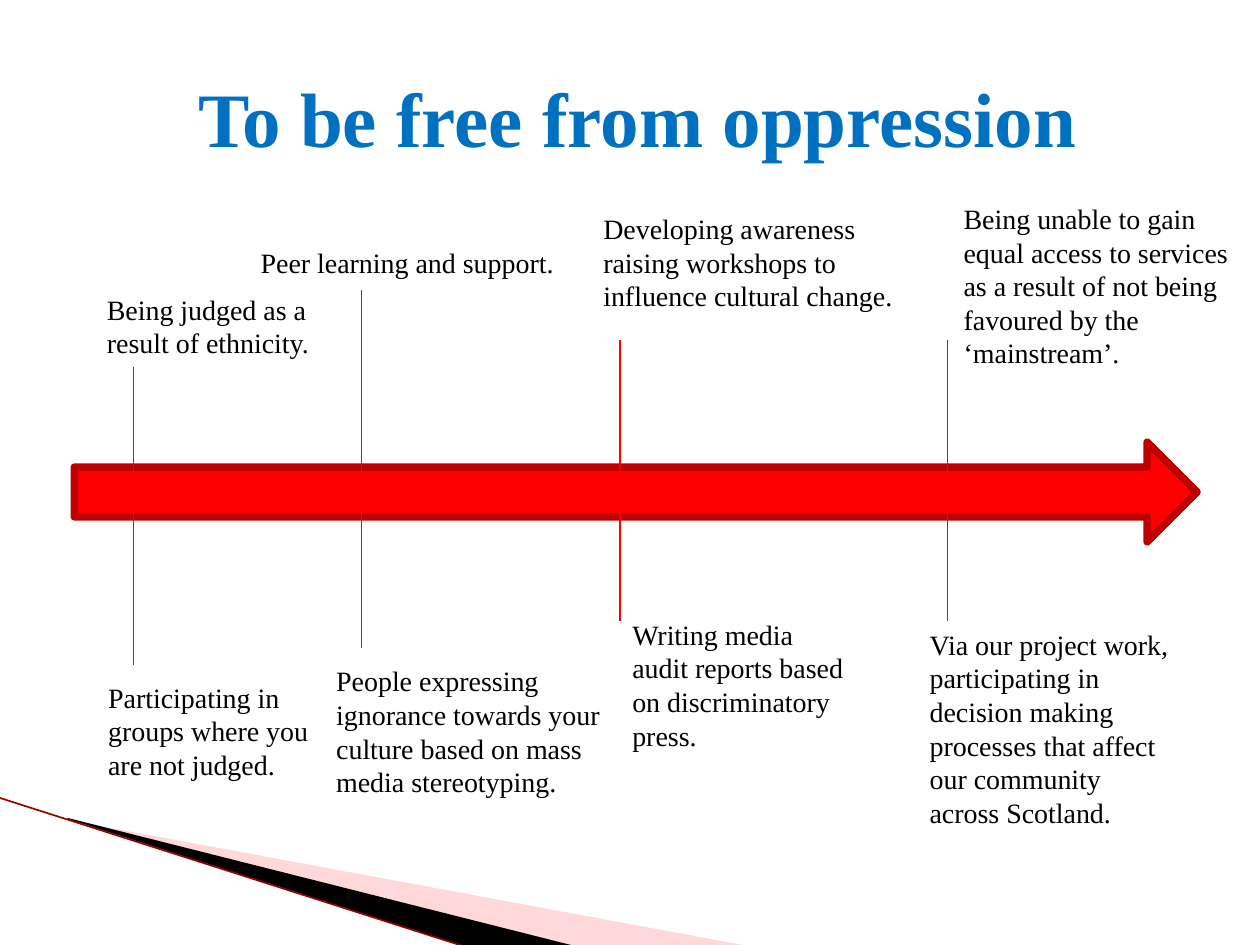
from lxml import etree
from pptx import Presentation
from pptx.dml.color import RGBColor
from pptx.enum.shapes import MSO_CONNECTOR, MSO_SHAPE
from pptx.enum.text import MSO_ANCHOR, PP_ALIGN
from pptx.oxml.ns import qn
from pptx.util import Inches, Pt

STRAIGHT = MSO_CONNECTOR.STRAIGHT
RIGHT_ARROW = MSO_SHAPE.RIGHT_ARROW
TOP, MIDDLE = MSO_ANCHOR.TOP, MSO_ANCHOR.MIDDLE
LEFT, CENTER = PP_ALIGN.LEFT, PP_ALIGN.CENTER

FONT = "Times New Roman"
RED = "FF0000"

# Timeline markers: x, top, bottom
MARKERS = [
    (1.06, 2.91, 5.28),
    (2.87, 2.30, 5.14),
    (4.92, 2.70, 4.93),
    (7.52, 2.70, 4.93),
]

# Labels: left, top, width, height, paragraphs
LABELS = [
    (0.75, 2.27, 2.13, 0.64, ["Being judged as a", "result of ethnicity."]),
    (0.76, 5.35, 1.81, 0.91, ["Participating in groups where you are not judged."]),
    (1.97, 1.90, 2.76, 0.37, ["Peer learning and support."]),
    (2.57, 5.22, 2.36, 1.18, ["People expressing ignorance towards your culture "
                              "based on mass media stereotyping."]),
    (4.69, 1.63, 2.60, 0.91, ["Developing awareness raising workshops to "
                              "influence cultural change."]),
    (4.92, 4.85, 1.97, 1.18, ["Writing media audit reports based on "
                              "discriminatory press."]),
    (7.55, 1.55, 2.30, 1.45, ["Being unable to gain equal access to services as a "
                              "result of not being favoured by the ‘mainstream’."]),
    (7.28, 4.93, 2.13, 1.72, ["Via our project work, participating in decision making "
                              "processes that affect our community across Scotland."]),
]


def rgb(color):
    return RGBColor.from_string(color)


def add_wedge(slide, points, color, opacity=100):
    start, *rest = [(Inches(x), Inches(y)) for x, y in points]
    builder = slide.shapes.build_freeform(*start)
    builder.add_line_segments(rest, close=True)
    sp = builder.convert_to_shape()
    sp.shadow.inherit = False
    sp.line.fill.background()
    sp.fill.solid()
    sp.fill.fore_color.rgb = rgb(color)
    if opacity < 100:
        clr = sp._element.spPr.find(qn("a:solidFill")).find(qn("a:srgbClr"))
        etree.SubElement(clr, qn("a:alpha")).set("val", str(opacity * 1000))


def add_line(slide, x1, y1, x2, y2, color, width):
    line = slide.shapes.add_connector(
        STRAIGHT, Inches(x1), Inches(y1), Inches(x2), Inches(y2))
    line.line.color.rgb = rgb(color)
    line.line.width = Pt(width)
    etree.SubElement(line._element.spPr, qn("a:effectLst"))


def add_arrow(slide, left, top, width, height):
    sp = slide.shapes.add_shape(
        RIGHT_ARROW, Inches(left), Inches(top), Inches(width), Inches(height))
    sp.shadow.inherit = False
    sp.fill.solid()
    sp.fill.fore_color.rgb = rgb(RED)
    sp.line.color.rgb = rgb("BD0000")
    sp.line.width = Pt(4.33)
    etree.SubElement(sp._element.spPr.find(qn("a:ln")), qn("a:round"))


def add_text(slide, left, top, width, height, paragraphs, size=16,
             color="000000", bold=False, align=LEFT, anchor=TOP, indent=0):
    box = slide.shapes.add_textbox(
        Inches(left), Inches(top), Inches(width), Inches(height))
    tf = box.text_frame
    tf.word_wrap = True
    tf.vertical_anchor = anchor
    tf.margin_left = Inches(0.1 + indent)
    tf.text = "\n".join(paragraphs)
    for p in tf.paragraphs:
        p.alignment = align
        p.font.name = FONT
        p.font.size = Pt(size)
        p.font.bold = bold
        p.font.color.rgb = rgb(color)


def main():
    prs = Presentation()
    prs.slide_width, prs.slide_height = Inches(10), Inches(7.5)
    slide = prs.slides.add_slide(prs.slide_layouts[6])

    # Corner decoration
    add_wedge(slide, [(0.55, 6.51), (5.95, 7.51), (4.56, 7.51), (0.55, 6.5)],
              "FFA2A2", opacity=40)
    add_wedge(slide, [(0.53, 6.49), (4.57, 7.51), (3.72, 7.52), (0.54, 6.5)],
              "000000")
    add_line(slide, -0.01, 6.33, 3.71, 7.52, "990000", 0.95)

    # Title
    add_text(slide, 0.5, 0.3, 9, 1.25, ["To be free from oppression"], size=44,
             color="0070C0", bold=True, align=CENTER, anchor=MIDDLE, indent=0.12)

    # Timeline
    add_arrow(slide, 0.59, 3.51, 8.91, 0.79)
    for x, top, bottom in MARKERS:
        add_line(slide, x, top, x, bottom, RED, 0.75)
    for label in LABELS:
        add_text(slide, *label)

    prs.save("out.pptx")


if __name__ == "__main__":
    main()
